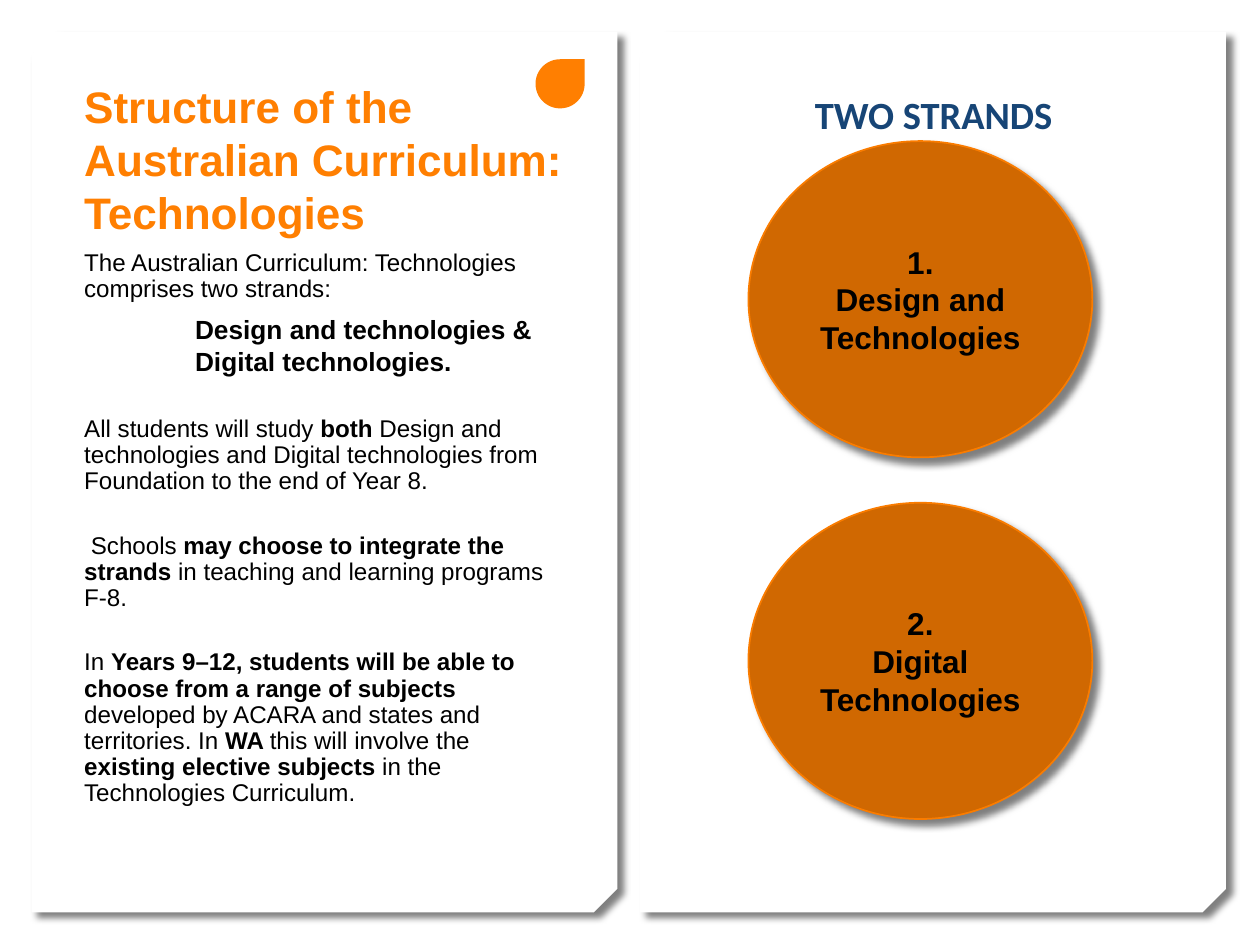
from lxml import etree
from pptx import Presentation
from pptx import util as u
from pptx.dml.color import RGBColor
from pptx.enum import shapes, text
from pptx.oxml.ns import qn

Inches, Pt = u.Inches, u.Pt
COLORS = {"white": "FFFFFF", "black": "000000", "accent": "FF7F01",
          "disc": "D06801", "rim": "FA7C00", "heading": "174576"}


def add_text(frame, words, size=13.8, color="black", font="Arial", bold=False,
             align=None, before=0, spacing=None, indent=0):
    """Add a paragraph; parts between ** marks switch the bold setting."""
    paragraph = frame.paragraphs[0]
    if paragraph.runs:
        paragraph = frame.add_paragraph()
    paragraph.alignment = align
    paragraph.space_before = Pt(before)
    if spacing:
        paragraph.line_spacing = spacing
    if indent:
        paragraph._p.get_or_add_pPr().set("marL", str(Inches(indent)))
    for i, part in enumerate(words.split("**")):
        if part:
            run = paragraph.add_run()
            run.text = part
            run.font.size = Pt(size)
            run.font.name = font
            run.font.bold = bold != (i % 2 == 1)
            run.font.color.rgb = RGBColor.from_string(COLORS[color])


def add_figure(kind, left, top, width, height, fill, rim=None, shadow=True):
    figure = slide.shapes.add_shape(kind, Inches(left), Inches(top), Inches(width), Inches(height))
    figure.shadow.inherit = False
    figure.fill.solid()
    figure.fill.fore_color.rgb = RGBColor.from_string(COLORS[fill])
    if rim:
        figure.line.color.rgb = RGBColor.from_string(COLORS[rim])
        figure.line.width = Pt(1)
    else:
        figure.line.fill.background()
    if shadow:
        effects = figure._element.spPr.find(qn("a:effectLst"))
        outer = etree.SubElement(effects, qn("a:outerShdw"), blurRad=str(Pt(4)), dist=str(Pt(5)),
                                 dir=str(45 * 60000), algn="tl", rotWithShape="0")
        tint = etree.SubElement(outer, qn("a:srgbClr"), val=COLORS["black"])
        etree.SubElement(tint, qn("a:alpha"), val="50000")
    return figure


prs = Presentation()
prs.slide_width, prs.slide_height = Inches(10), Inches(7.5)
slide = prs.slides.add_slide(prs.slide_layouts[6])

# Two pages with a clipped lower right corner
for left in (0.25, 5.08):
    page = add_figure(shapes.MSO_SHAPE.SNIP_2_DIAG_RECTANGLE, left, 0.25, 4.65, 6.99, "white")
    page.adjustments[0], page.adjustments[1] = 0.04, 0
add_figure(shapes.MSO_SHAPE.TEAR, 4.25, 0.47, 0.39, 0.39, "accent", shadow=False)

# Text areas
frames = []
for left, top, height in ((0.57, 0.67, 1.27), (0.57, 1.94, 4.56), (5.41, 0.67, 0.45)):
    box = slide.shapes.add_textbox(Inches(left), Inches(top), Inches(4), Inches(height))
    box.text_frame.word_wrap = True
    frames.append(box.text_frame)
title, body, heading = frames

title.vertical_anchor = text.MSO_ANCHOR.BOTTOM
add_text(title, "Structure of the Australian Curriculum: Technologies",
         size=25.2, color="accent", bold=True)
add_text(heading, "TWO STRANDS", size=22, color="heading", font="Calibri", bold=True,
         align=text.PP_ALIGN.CENTER)

add_text(body, "The Australian Curriculum: Technologies comprises two strands:", spacing=0.9)
add_text(body, "Design and technologies & Digital technologies.",
         size=15, bold=True, before=6, indent=0.88)
for before, words in (
    (23, "All students will study **both** Design and technologies and Digital technologies "
         "from Foundation to the end of Year 8."),
    (22, " Schools **may choose to integrate the strands **in teaching and learning programs F-8."),
    (22, "In **Years 9–12, students will be able to choose from a range of subjects** developed by "
         "ACARA and states and territories. In **WA **this will involve the "
         "**existing elective subjects **in the Technologies Curriculum."),
):
    add_text(body, words, before=before, spacing=0.9)

# The two strands
for number, strand in enumerate(("Design and Technologies", "Digital Technologies")):
    disc = add_figure(shapes.MSO_SHAPE.OVAL, 5.94, 1.12 + 2.87 * number, 2.73, 2.51, "disc", rim="rim")
    disc.text_frame.word_wrap = True
    disc.text_frame.vertical_anchor = text.MSO_ANCHOR.MIDDLE
    for words in (f"{number + 1}.", strand):
        add_text(disc.text_frame, words, size=18, bold=True, align=text.PP_ALIGN.CENTER)

prs.save("out.pptx")
